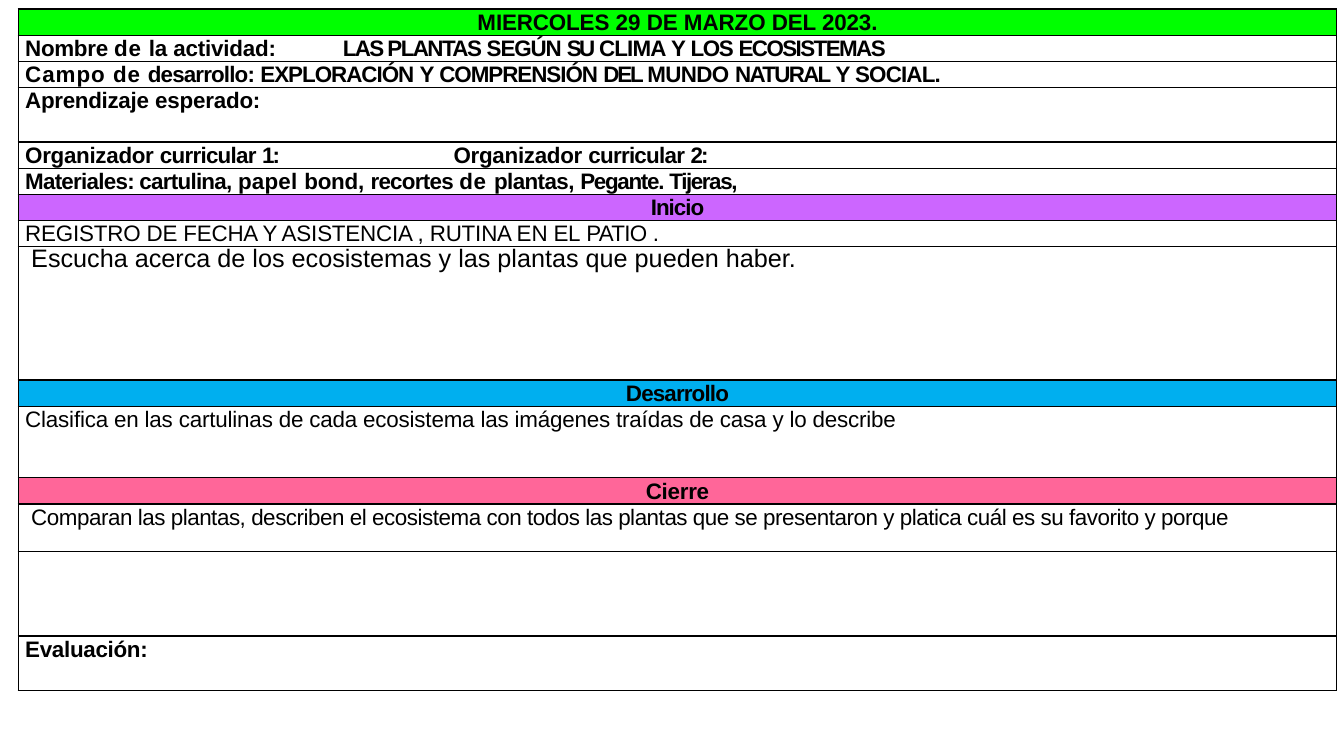
from lxml import etree
from pptx import Presentation, util as u
from pptx.dml.color import RGBColor
from pptx.enum import text
from pptx.oxml import ns

BLACK = RGBColor(0, 0, 0)
GREEN = RGBColor(0, 255, 0)
PURPLE = RGBColor(0xCC, 0x66, 0xFF)
BLUE = RGBColor(0, 0xAF, 0xEF)
PINK = RGBColor(0xFF, 0x66, 0x99)

DATE = [("MI", 0), ("ERCOLE", -0.1), ("S ", 0), ("2", -0.1), ("9 ", 0), ("D", -0.1),
        ("E M", 0), ("ARZ", -0.1), ("O ", 0), ("DE", -0.1), ("L ", 0), ("2023", -0.1), (".", 0)]
NAME = [("Nombre ", -0.2), ("de ", 0.6), ("la actividad:", -0.1)]
TOPIC = [("LAS PLANTAS ", -1.1), ("SEGÚN ", -0.8), ("SU ", -1.8), ("CLIMA ", -0.6),
         ("Y ", -0.8), ("LOS ", -1), ("ECOSISTEMAS", -1.1)]
FIELD = [("Campo ", 0.7), ("de ", 0.6), ("desarrollo: ", -0.6), ("EXPLORACIÓN ", -0.7),
         ("Y ", -0.8), ("COMPRENSIÓN ", -0.7), ("DEL ", -1.6), ("MUNDO ", -0.4),
         ("NATURAL ", -1.2), ("Y ", -0.8), ("SOCIAL.", -0.6)]
GOAL = [("Aprendizaje ", -0.2), ("esperado:", -0.1)]
PLAN = [("Organizador ", -0.2), ("curricular ", -0.5)]
TOOLS = [("Materiales: cartulina, ", -0.5), ("papel ", 0.2), ("bond, ", -0.1),
         ("recortes ", -0.5), ("de ", 0.6), ("plantas, ", -0.4), ("Pegante. ", -0.9),
         ("Tijeras,", -1)]
START = [("REGISTRO DE FECHA Y ASISTENCIA , RUTINA EN EL ", -0.1), ("PATIO ", -0.5), (".", -0.1)]
LISTEN = [("Escucha acerca de los ecosistemas y las plantas que pueden haber.", 0)]
SORT = [("Clasifica en las cartulinas de cada ecosistema las imágenes traídas de casa "
         "y lo describe", -0.1)]
SHARE = [("Comparan las plantas, describen el ecosistema con todos las plantas que se "
          "presentaron y platica cuál es su favorito y porque", -0.3)]


class Deck:
    font = "Arial"
    size = 16

    def __init__(self):
        self.prs = Presentation()
        self.prs.slide_width = u.Inches(13.33)
        self.prs.slide_height = u.Inches(7.5)
        self.slide = self.prs.slides.add_slide(self.prs.slide_layouts[6])

    def table(self, left, top, cols, rows):
        frame = self.slide.shapes.add_table(
            len(rows), len(cols), u.Inches(left), u.Inches(top),
            u.Inches(sum(cols)), u.Inches(sum(rows)))
        grid = frame.table
        grid.first_row = grid.horz_banding = False
        for col, width in zip(grid.columns, cols):
            col.width = u.Inches(width)
        for row, height in zip(grid.rows, rows):
            row.height = u.Inches(height)
        for cell in grid.iter_cells():
            cell.margin_left = cell.margin_right = 0
            cell.margin_top = cell.margin_bottom = 0
            cell.fill.background()
            para = cell.text_frame.paragraphs[0]
            para.line_spacing = u.Pt(12)
            end = etree.SubElement(para._p, ns.qn("a:endParaRPr"))
            end.set("sz", "1000")
        return grid

    def label(self, cell, runs, indent=0.07, bold=True, size=size, lead=18.6, center=False):
        para = cell.text_frame.paragraphs[0]
        para.line_spacing = u.Pt(lead)
        if center:
            para.alignment = text.PP_ALIGN.CENTER
        else:
            para._p.get_or_add_pPr().set("marL", str(u.Inches(indent)))
        for words, gap in runs:
            run = para.add_run()
            run.text = words
            run.font.name = self.font
            run.font.size = u.Pt(size)
            run.font.bold = bold
            run.font.color.rgb = BLACK
            run._r.get_or_add_rPr().set("spc", str(round(gap * 100)))

    def band(self, cell, runs, color):
        self.label(cell, runs, center=True)
        cell.fill.solid()
        cell.fill.fore_color.rgb = color

    def border(self, cell, sides):
        props = cell._tc.get_or_add_tcPr()
        for spot, side in enumerate("LRTB"):
            line = etree.Element(ns.qn(f"a:ln{side}"), w=str(u.Pt(1)))
            if side in sides:
                fill = etree.SubElement(line, ns.qn("a:solidFill"))
                etree.SubElement(fill, ns.qn("a:srgbClr"), val=str(BLACK))
            else:
                etree.SubElement(line, ns.qn("a:noFill"))
            props.insert(spot, line)


def main():
    deck = Deck()
    rows = ([0.26] * 3 + [0.54] + [0.26] * 5 + [0.27] * 3
            + [0.25, 0.26, 0.71, 0.26, 0.47, 0.28, 0.23, 0.33, 0.54])
    grid = deck.table(0.18, 0.09, [2.99, 10.09], rows)

    split = (1, 4)
    inner = (9, 10, 11, 12, 18, 19)
    for row in range(len(rows)):
        top = "" if row in inner else "T"
        base = "" if row + 1 in inner else "B"
        first, last = grid.cell(row, 0), grid.cell(row, 1)
        if row not in split:
            first.merge(last)
        deck.border(first, "L" + top + base + ("" if row in split else "R"))
        deck.border(last, "R" + top + base)

    bands = {0: (DATE, GREEN), 6: ([("Inicio", -0.7)], PURPLE),
             13: ([("Desarrollo", -0.6)], BLUE), 15: ([("Cierre", -0.2)], PINK)}
    for row, (runs, color) in bands.items():
        deck.band(grid.cell(row, 0), runs, color)

    heads = {1: NAME, 2: FIELD, 3: GOAL, 4: PLAN + [("1:", -1.4)], 5: TOOLS,
             20: [("Evaluación:", -0.2)]}
    for row, runs in heads.items():
        deck.label(grid.cell(row, 0), runs)
    deck.label(grid.cell(1, 1), TOPIC, 0.23)
    deck.label(grid.cell(4, 1), PLAN + [("2:", -1.4)], 1.33)

    deck.label(grid.cell(7, 0), START, bold=False, lead=18.2)
    deck.label(grid.cell(8, 0), LISTEN, 0.13, False, 18, 18.9)
    deck.label(grid.cell(14, 0), SORT, bold=False, lead=18.2)
    deck.label(grid.cell(16, 0), SHARE, 0.13, False, lead=18.5)
    deck.prs.save("out.pptx")


if __name__ == "__main__":
    main()
